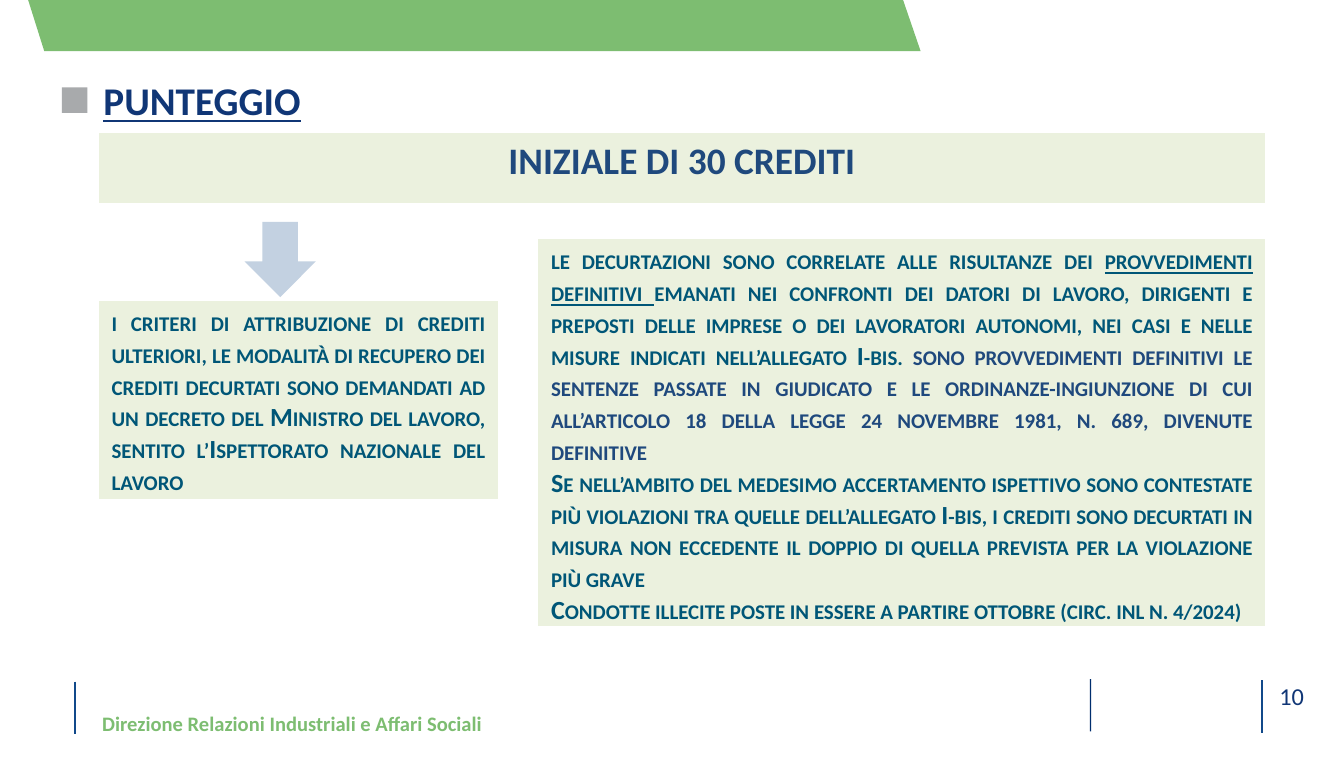
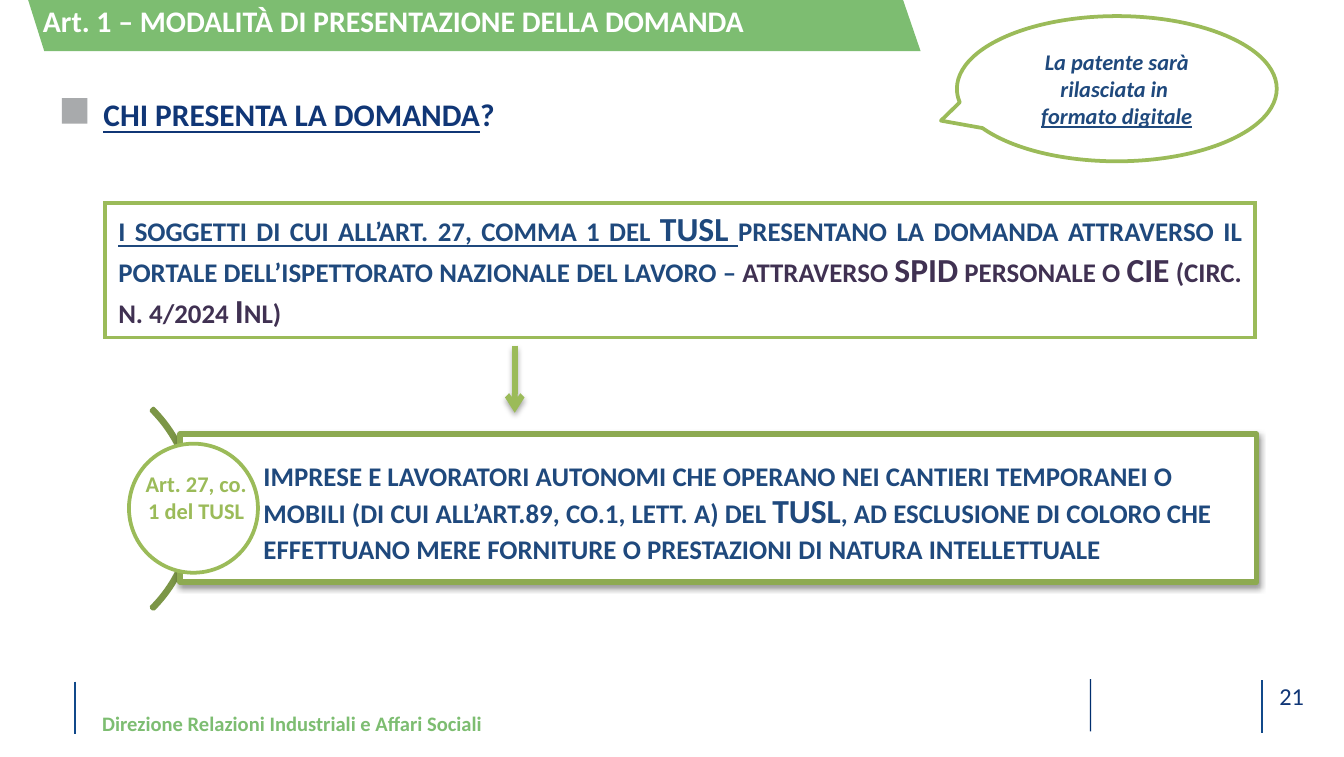
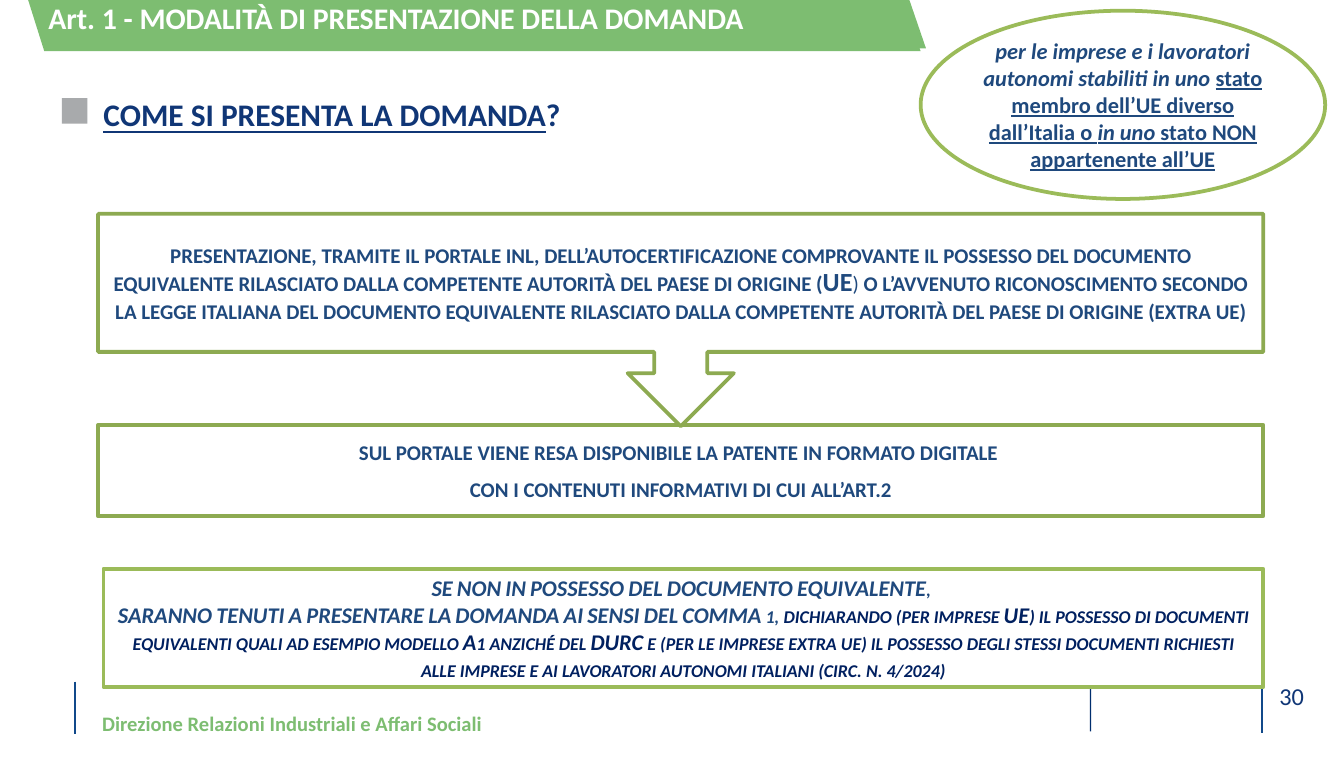
"""Build three slides on the credit-based site licence."""
from dataclasses import dataclass, replace

from lxml import etree
from pptx import Presentation
from pptx import util as u
from pptx.dml.color import RGBColor
from pptx.enum import shapes, text
from pptx.oxml.ns import qn

FONT = "Calibri"
CELL = u.Inches(0.1)
COLS, ROWS = 100, 56.3

WHITE = RGBColor(0xFF, 0xFF, 0xFF)
GREEN = RGBColor(0x7D, 0xBD, 0x71)
OLIVE = RGBColor(0x9B, 0xBB, 0x59)
MOSS = RGBColor(0x8D, 0xAA, 0x51)
DARK_MOSS = RGBColor(0x7C, 0x96, 0x47)
PALE = RGBColor(0xEB, 0xF1, 0xDE)
GREY = RGBColor(0x93, 0x95, 0x98)
TITLE_BLUE = RGBColor(0x10, 0x36, 0x76)
RULE_BLUE = RGBColor(0x11, 0x49, 0x8A)
BAR_BLUE = RGBColor(0x00, 0x2E, 0x6E)
BLUE = RGBColor(0x1F, 0x49, 0x7D)
NAVY = RGBColor(0x00, 0x20, 0x60)
TEAL = RGBColor(0x00, 0x56, 0x77)
PURPLE = RGBColor(0x40, 0x31, 0x52)

LEFT, CENTER, JUSTIFY = text.PP_ALIGN.LEFT, text.PP_ALIGN.CENTER, text.PP_ALIGN.JUSTIFY
TOP, MIDDLE, BOTTOM = text.MSO_ANCHOR.TOP, text.MSO_ANCHOR.MIDDLE, text.MSO_ANCHOR.BOTTOM
PRESET = shapes.MSO_SHAPE


@dataclass(frozen=True)
class Box:
    """A place on the grid, in columns and rows."""
    col: float
    row: float
    cols: float
    rows: float

    def emu(self) -> list[int]:
        """Return left, top, width and height in EMU."""
        return [grid(n) for n in (self.col, self.row, self.cols, self.rows)]


@dataclass(frozen=True)
class Style:
    """The look of a run."""
    size: float
    color: RGBColor
    bold: bool = True
    italic: bool = False
    underline: bool = False
    small: bool = False


@dataclass(frozen=True)
class Para:
    """A paragraph as (text, style) runs."""
    runs: list[tuple[str, Style]]
    align: text.PP_ALIGN = LEFT
    line: float = 1.0
    after: float = 0


@dataclass(frozen=True)
class Frame:
    """Insets in grid cells (left, top, right, bottom) and the anchor."""
    insets: tuple[float, float, float, float] = (0, 0, 0, 0)
    anchor: text.MSO_ANCHOR = TOP


@dataclass(frozen=True)
class Edges:
    """Border colour, common width and bottom width of a panel."""
    color: RGBColor
    width: float
    bottom: float


HEADING = Style(21, TITLE_BLUE, underline=True, small=True)
FOOTER = Style(11, GREEN)
NUMBER = Style(13, TITLE_BLUE, bold=False)
BANNER = Style(16, WHITE)
RULE_TEXT = Style(14, TEAL, small=True)
SUBJECT = Style(18, BLUE, small=True)
STEP = Style(14, BLUE, small=True)
BUBBLE = Style(12, BLUE, italic=True)
NOTE = Style(12, BLUE, italic=True, small=True)
WHITE_EDGES = Edges(WHITE, 1, 3)
OLIVE_EDGES = Edges(OLIVE, 2.25, 2.25)
PADDED = Frame((0.8, 0.4, 0.8, 0.4))
CENTRED = Frame(anchor=MIDDLE)


def grid(n: float) -> int:
    """Convert grid cells to EMU."""
    return round(n * CELL)


def write(tf, paras: list[Para]) -> None:
    """Fill a text frame run by run."""
    tf.word_wrap = True
    for i, para in enumerate(paras):
        p = tf.paragraphs[0] if i == 0 else tf.add_paragraph()
        p.alignment, p.line_spacing = para.align, para.line
        p.space_after = u.Pt(para.after)
        for words, style in para.runs:
            r = p.add_run()
            r.text = words
            font = r.font
            font.name, font.size = FONT, u.Pt(style.size)
            font.bold, font.italic, font.underline = style.bold, style.italic, style.underline
            font.color.rgb = style.color
            if style.small:
                r._r.get_or_add_rPr().set("cap", "small")


def place(tf, paras: list[Para], frame: Frame) -> None:
    """Set insets and anchor, then write."""
    tf.margin_left, tf.margin_top, tf.margin_right, tf.margin_bottom = map(grid, frame.insets)
    tf.vertical_anchor = frame.anchor
    write(tf, paras)


def add_text(s, box: Box, paras: list[Para], frame: Frame = Frame()) -> None:
    """Add a text box."""
    place(s.shapes.add_textbox(*box.emu()).text_frame, paras, frame)


def paint(sp, fill: RGBColor | None, line: RGBColor | None, width: float, alpha: int) -> None:
    """Set fill, opacity and outline, without a shadow."""
    sp.shadow.inherit = False
    if fill is None:
        sp.fill.background()
    else:
        sp.fill.solid()
        sp.fill.fore_color.rgb = fill
        if alpha < 100:
            color = sp._element.spPr.find(qn("a:solidFill"))[0]
            etree.SubElement(color, qn("a:alpha"), val=str(alpha * 1000))
    if line is None:
        sp.line.fill.background()
    else:
        sp.line.color.rgb = line
        sp.line.width = u.Pt(width)


def add_preset(s, kind, box: Box, fill: RGBColor | None = WHITE, line: RGBColor | None = None,
               width: float = 2, alpha: int = 100):
    """Add a preset shape."""
    sp = s.shapes.add_shape(kind, *box.emu())
    paint(sp, fill, line, width, alpha)
    return sp


def add_line(s, col: float, row: float, rows: float, color: RGBColor, width: float):
    """Add a vertical line."""
    x, y = grid(col), grid(row)
    sp = s.shapes.add_connector(shapes.MSO_CONNECTOR.STRAIGHT, x, y, x, y + grid(rows))
    sp.line.color.rgb = color
    sp.line.width = u.Pt(width)
    etree.SubElement(sp._element.spPr, qn("a:effectLst"))
    return sp


def cast_shadow(sp, alpha: int, distance: float) -> None:
    """Give a shape a soft shadow below it."""
    effects = sp._element.spPr.find(qn("a:effectLst"))
    shadow = etree.SubElement(effects, qn("a:outerShdw"), blurRad=str(u.Pt(3.1)),
                              dist=str(u.Pt(distance)), dir="5400000", rotWithShape="0")
    color = etree.SubElement(shadow, qn("a:srgbClr"), val="000000")
    etree.SubElement(color, qn("a:alpha"), val=str(alpha * 1000))


def add_panel(s, box: Box, paras: list[Para], fill: RGBColor, edges: Edges,
              anchor: text.MSO_ANCHOR = TOP) -> None:
    """Add a one-cell table."""
    table = s.shapes.add_table(1, 1, *box.emu()).table
    table.first_row = table.horz_banding = False
    cell = table.cell(0, 0)
    tc_pr = cell._tc.get_or_add_tcPr()
    for side in "LRTB":
        width = edges.bottom if side == "B" else edges.width
        ln = etree.SubElement(tc_pr, qn(f"a:ln{side}"), w=str(u.Pt(width)))
        solid = etree.SubElement(ln, qn("a:solidFill"))
        etree.SubElement(solid, qn("a:srgbClr"), val=str(edges.color))
    cell.fill.solid()
    cell.fill.fore_color.rgb = fill
    cell.vertical_anchor = anchor
    write(cell.text_frame, paras)


def add_band(s, col: float = 2.1, row: float = 0, words: str = "") -> None:
    """Add the slanted green band."""
    corners = [(0, 0), (1.2, 3.8), (66.4, 3.8), (65.1, 0)]
    points = [(grid(col + x), grid(row + y)) for x, y in corners]
    builder = s.shapes.build_freeform(*points[0])
    builder.add_line_segments(points[1:], close=True)
    sp = builder.convert_to_shape()
    paint(sp, GREEN, None, 0, 100)
    if words:
        place(sp.text_frame, [Para([(words, BANNER)])], Frame((1.1, 0.2, 0, 0)))


def add_base(prs, number: int, heading: list[tuple[str, Style]], row: float, square_row: float,
             banner: str = ""):
    """Add a slide with footer, heading and band."""
    s = prs.slides.add_slide(prs.slide_layouts[6])
    for col, top in ((5.6, 50.7), (93.9, 50.6)):
        add_line(s, col, top, 3.9, RULE_BLUE, 1)
    add_preset(s, PRESET.RECTANGLE, Box(81.1, 50.5, 0.1, 3.9), BAR_BLUE)
    add_text(s, Box(7.7, row, 84.6, 3.5), [Para(heading)])
    add_text(s, Box(94.2, 50.7, 3.8, 2.4), [Para([(str(number), NUMBER)], CENTER)])
    add_preset(s, PRESET.RECTANGLE, Box(4.6, square_row, 1.9, 1.9), GREY, alpha=80)
    add_band(s, words=banner)
    add_text(s, Box(7.6, 50.7, 44.1, 4),
             [Para([("Direzione Relazioni Industriali e Affari Sociali", FOOTER)])],
             Frame(anchor=BOTTOM))
    return s


def question(words: str) -> list[tuple[str, Style]]:
    """Return a heading whose question mark is not underlined."""
    return [(words, HEADING), ("?", replace(HEADING, underline=False))]


def add_score_slide(prs) -> None:
    """Add the slide on the starting score."""
    s = add_base(prs, 10, [("PUNTEGGIO", HEADING)], 5.7, 6.5)
    add_panel(s, Box(40, 17.7, 54.2, 28.8), [
        Para([
            ("le decurtazioni sono correlate alle risultanze dei ", RULE_TEXT),
            ("provvedimenti definitivi ", replace(RULE_TEXT, underline=True)),
            ("emanati nei confronti dei datori di lavoro, dirigenti e preposti delle imprese o dei "
             "lavoratori autonomi, nei casi e nelle misure indicati nell’allegato I-bis. ",
             RULE_TEXT),
            ("sono provvedimenti definitivi le sentenze passate in giudicato e le "
             "ordinanze-ingiunzione di cui all’articolo 18 della legge 24 novembre 1981, n. 689, "
             "divenute definitive", replace(RULE_TEXT, color=BLUE)),
        ], JUSTIFY),
        Para([("Se nell’ambito del medesimo accertamento ispettivo sono contestate più violazioni "
               "tra quelle dell’allegato I-bis, i crediti sono decurtati in misura non eccedente "
               "il doppio di quella prevista per la violazione più grave", RULE_TEXT)], JUSTIFY),
        Para([("Condotte illecite poste in essere a partire ottobre (circ. inl n. 4/2024)",
               RULE_TEXT)], JUSTIFY),
    ], PALE, WHITE_EDGES, MIDDLE)
    add_panel(s, Box(7.3, 9.8, 86.9, 5.5),
              [Para([("INIZIALE DI 30 CREDITI", Style(20, BLUE))], CENTER)], PALE, WHITE_EDGES)
    add_panel(s, Box(7.3, 22.3, 29.8, 14.8), [
        Para([("i criteri di attribuzione di crediti ulteriori, le modalità di recupero dei "
               "crediti decurtati sono demandati ad un decreto del Ministro del lavoro, sentito "
               "l’Ispettorato nazionale del lavoro", RULE_TEXT)], JUSTIFY),
    ], PALE, WHITE_EDGES)
    add_preset(s, PRESET.DOWN_ARROW, Box(18.2, 16.5, 5.3, 5.6), RULE_BLUE, alpha=25)


def add_applicant_slide(prs) -> None:
    """Add the slide on who applies."""
    s = add_base(prs, 21, question("chi presenta la domanda"), 6.5, 7.3,
                 "Art. 1 – MODALITÀ DI PRESENTAZIONE DELLA DOMANDA")
    add_panel(s, Box(7.8, 15.1, 85.6, 10), [
        Para([
            ("i soggetti di cui all’art. 27, comma 1 del TUSL ", replace(SUBJECT, underline=True)),
            ("presentano la domanda attraverso il portale dell’ispettorato nazionale del lavoro – ",
             SUBJECT),
            ("attraverso SPID personale o CIE (circ. n. 4/2024 Inl)",
             replace(SUBJECT, color=PURPLE)),
        ], JUSTIFY),
    ], WHITE, OLIVE_EDGES)
    arrow = add_line(s, 38.3, 25.7, 5, OLIVE, 3)
    etree.SubElement(arrow._element.spPr.find(qn("a:ln")), qn("a:tailEnd"), type="arrow")
    cast_shadow(arrow, 35, 1.8)

    arc = add_preset(s, PRESET.BLOCK_ARC, Box(-6.6, 27.3, 21.1, 21.1), None, DARK_MOSS)
    for i, value in enumerate((189, 27, 0.01)):
        arc.adjustments[i] = value
    body = Box(13.4, 32.3, 80.1, 11)
    cast_shadow(add_preset(s, PRESET.RECTANGLE, body, WHITE, MOSS, 3), 38, 1.6)
    add_text(s, body, [
        Para([("imprese e lavoratori autonomi che operano nei cantieri temporanei o mobili (di cui "
               "all’art.89, co.1, lett. a) del TUSL, ad esclusione di coloro che effettuano mere "
               "forniture o prestazioni di natura intellettuale", SUBJECT)], line=0.9),
    ], Frame((6.2, 1.1, 0.5, 0.5), MIDDLE))
    add_preset(s, PRESET.OVAL, Box(9.6, 33, 9.6, 9.6), WHITE, OLIVE)

    bubble = add_preset(s, PRESET.OVAL_CALLOUT, Box(71.2, 1.2, 23.8, 10.8), WHITE, OLIVE)
    bubble.adjustments[0], bubble.adjustments[1] = -0.55, 0.22
    place(bubble.text_frame, [
        Para([("La patente sarà rilasciata in ", BUBBLE)], CENTER),
        Para([("formato digitale", replace(BUBBLE, underline=True))], CENTER),
    ], CENTRED)
    add_text(s, Box(10, 34.6, 9.2, 4.8),
             [Para([("Art. 27, co. 1 del TUSL", Style(12, OLIVE))], CENTER)], PADDED)


def add_procedure_slide(prs) -> None:
    """Add the slide on how to apply."""
    s = add_base(prs, 30, question("come si presenta la domanda"), 6.5, 7.3)
    result = Box(7.3, 31.6, 86.7, 6.8)
    add_preset(s, PRESET.RECTANGLE, result, WHITE, MOSS)
    add_text(s, result, [
        Para([("sul portale viene resa disponibile la patente in formato digitale ", STEP)],
             CENTER, 0.9, 4.5),
        Para([("con i contenuti informativi di cui all’art.2", STEP)], CENTER, 0.9),
    ], Frame((0.9, 0.9, 0.9, 0.9), MIDDLE))

    callout = Box(7.3, 15.9, 86.7, 15.8)
    add_preset(s, PRESET.UP_ARROW_CALLOUT, callout, WHITE, MOSS).rotation = 180
    add_text(s, replace(callout, rows=10.3), [
        Para([
            ("presentazione, tramite il portale inl, dell’autocertificazione comprovante il "
             "possesso del documento equivalente rilasciato dalla competente autorità del paese "
             "di origine (UE", STEP),
            (") ", replace(STEP, bold=False)),
            ("o l’avvenuto riconoscimento secondo la legge italiana del documento equivalente "
             "rilasciato dalla competente autorità del paese di origine (extra ue)", STEP),
        ], CENTER, 0.9),
    ], Frame((1.1, 1.1, 1.1, 1.1), MIDDLE))

    note = add_preset(s, PRESET.RECTANGLE, Box(7.7, 42.3, 86.3, 8.8), WHITE, OLIVE)
    place(note.text_frame, [
        Para([("SE NON IN POSSESSO DEL DOCUMENTO EQUIVALENTE, ", NOTE)], CENTER),
        Para([
            ("SARANNO TENUTI A PRESENTARE LA DOMANDA AI SENSI DEL COMMA 1, ", NOTE),
            ("dichiarando (per imprese UE) il possesso di documenti equivalenti quali ad esempio "
             "modello A1 anziché del DURC e (per le imprese extra ue) il possesso degli stessi "
             "documenti richiesti alle imprese e ai lavoratori autonomi italiani "
             "(circ. n. 4/2024)", replace(NOTE, color=NAVY)),
        ], CENTER),
    ], PADDED)

    bubble = add_preset(s, PRESET.OVAL, Box(68.5, 0.8, 30.1, 14), WHITE, OLIVE)
    linked = replace(BUBBLE, italic=False, underline=True)
    place(bubble.text_frame, [
        Para([
            ("per le imprese e i lavoratori autonomi stabiliti in uno ", BUBBLE),
            ("stato membro dell’UE diverso dall’Italia o ", linked),
            ("in uno ", replace(linked, italic=True)),
            ("stato NON appartenente all’UE", linked),
        ], CENTER),
    ], CENTRED)
    add_band(s, 2.5, -0.2, "Art. 1 - MODALITÀ DI PRESENTAZIONE DELLA DOMANDA")


def main() -> None:
    """Build and save the presentation."""
    prs = Presentation()
    prs.slide_width, prs.slide_height = grid(COLS), grid(ROWS)
    add_score_slide(prs)
    add_applicant_slide(prs)
    add_procedure_slide(prs)
    prs.save("out.pptx")


if __name__ == "__main__":
    main()
